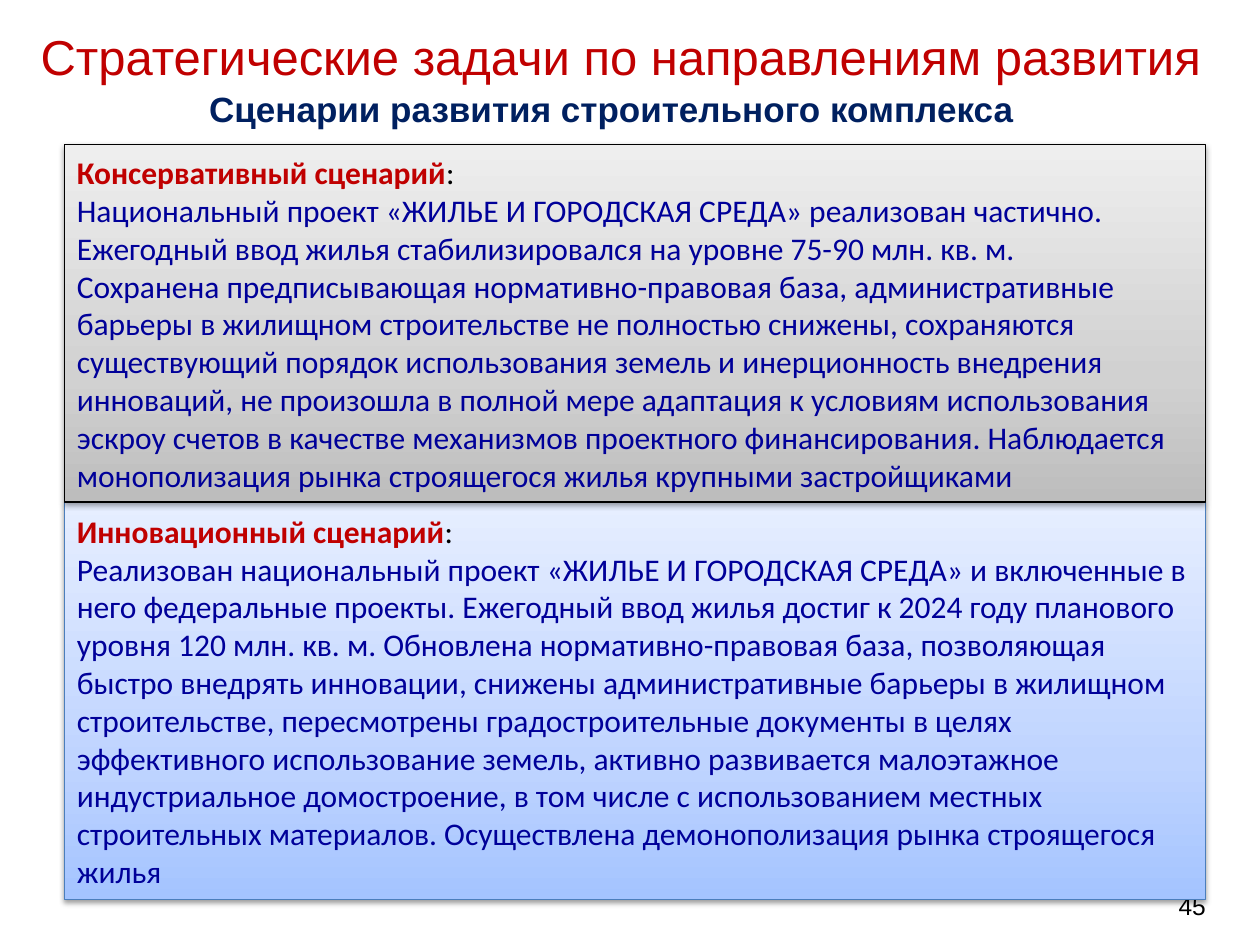
from dataclasses import dataclass
from lxml.etree import SubElement
from pptx import Presentation
from pptx.dml.color import RGBColor as RGB
from pptx.enum.shapes import MSO_SHAPE
from pptx.enum.text import MSO_ANCHOR, PP_ALIGN
from pptx.oxml.ns import qn
from pptx.util import Cm, Pt


@dataclass(frozen=True)
class Theme:
    red: str = "C00000"
    navy: str = "002060"
    blue: str = "000099"
    black: str = "000000"
    blue_line: str = "4B7EBC"
    blue_fill: tuple = ("A4C4FF", "BFD4FF", "E6EEFF")
    gray_fill: tuple = ("BDBDBD", "D1D1D1", "EEEEEE")
    title: int = 28
    subtitle: int = 20
    body: int = 18
    number: int = 14
    head_font: str = "Arial"
    body_font: str = "Calibri"


def add_run(p, text, font, size, color, bold=False):
    r = p.add_run()
    r.text = text
    r.font.name = font
    r.font.size = Pt(size)
    r.font.bold = bold
    r.font.color.rgb = RGB.from_string(color)


theme = Theme()
prs = Presentation()
prs.slide_width, prs.slide_height = Cm(25.4), Cm(19.05)
s = prs.slides.add_slide(prs.slide_layouts[6])

headings = [
    ("45", (18.64, 17.75, 5.92, 1.02), theme.number, theme.black, False,
     PP_ALIGN.RIGHT, MSO_ANCHOR.MIDDLE),
    ("Сценарии развития строительного комплекса ", (0.46, 1.63, 23.93, 1.12),
     theme.subtitle, theme.navy, True, PP_ALIGN.CENTER, MSO_ANCHOR.TOP),
    ("Стратегические задачи по направлениям развития", (0.28, 0.08, 24.46, 2.11),
     theme.title, theme.red, False, PP_ALIGN.CENTER, MSO_ANCHOR.MIDDLE),
]
for text, box, size, color, bold, align, anchor in headings:
    tf = s.shapes.add_textbox(*map(Cm, box)).text_frame
    tf.word_wrap = True
    tf.vertical_anchor = anchor
    p = tf.paragraphs[0]
    p.alignment = align
    add_run(p, text, theme.head_font, size, color, bold)

scenarios = [
    ("Инновационный сценарий", 10.13, 8, theme.blue_fill, theme.blue_line, [
        "Реализован национальный проект «ЖИЛЬЕ И ГОРОДСКАЯ СРЕДА» и включенные в "
        "него федеральные проекты. Ежегодный ввод жилья достиг к 2024 году планового "
        "уровня 120 млн. кв. м. Обновлена нормативно-правовая база, позволяющая "
        "быстро внедрять инновации, снижены административные барьеры в жилищном "
        "строительстве, пересмотрены градостроительные документы в целях "
        "эффективного использование земель, активно развивается малоэтажное "
        "индустриальное домостроение, в том числе с использованием местных "
        "строительных материалов. Осуществлена демонополизация рынка строящегося "
        "жилья",
    ]),
    ("Консервативный сценарий", 2.92, 7.2, theme.gray_fill, theme.black, [
        "Национальный проект «ЖИЛЬЕ И ГОРОДСКАЯ СРЕДА» реализован частично. "
        "Ежегодный ввод жилья стабилизировался на уровне 75-90 млн. кв. м.",
        "Сохранена предписывающая нормативно-правовая база, административные "
        "барьеры в жилищном строительстве не полностью снижены, сохраняются "
        "существующий порядок использования земель и инерционность внедрения "
        "инноваций, не произошла в полной мере адаптация к условиям использования "
        "эскроу счетов в качестве механизмов проектного финансирования. Наблюдается "
        "монополизация рынка строящегося жилья крупными застройщиками",
    ]),
]
for name, top, height, fill, line, parts in scenarios:
    sp = s.shapes.add_shape(MSO_SHAPE.RECTANGLE, Cm(1.3), Cm(top), Cm(23.01), Cm(height))
    sp.line.color.rgb = RGB.from_string(line)
    sp.line.width = Pt(0.75)

    sp.fill.gradient()
    sp.fill.gradient_angle = 90
    stops = sp._element.spPr.find(".//" + qn("a:gsLst"))
    stops.clear()
    for pos, color in zip((0, 35, 100), fill):
        gs = SubElement(stops, qn("a:gs"), pos=str(pos * 1000))
        SubElement(gs, qn("a:srgbClr"), val=color)

    sp.shadow.inherit = False
    effects = sp._element.spPr.find(qn("a:effectLst"))
    shadow = SubElement(effects, qn("a:outerShdw"), blurRad=str(Pt(3.1)),
                        dist=str(Pt(1.6)), dir="5400000", rotWithShape="0")
    tint = SubElement(shadow, qn("a:srgbClr"), val=theme.black)
    SubElement(tint, qn("a:alpha"), val="38000")

    tf = sp.text_frame
    tf.word_wrap = True
    tf.vertical_anchor = MSO_ANCHOR.MIDDLE
    p = tf.paragraphs[0]
    p.alignment = PP_ALIGN.LEFT
    add_run(p, name, theme.body_font, theme.body, theme.red, True)
    add_run(p, ":", theme.body_font, theme.body, theme.black)
    p = tf.add_paragraph()
    p.alignment = PP_ALIGN.LEFT
    for i, part in enumerate(parts):
        if i:
            p.add_line_break()
        add_run(p, part, theme.body_font, theme.body, theme.blue)

prs.save("out.pptx")
